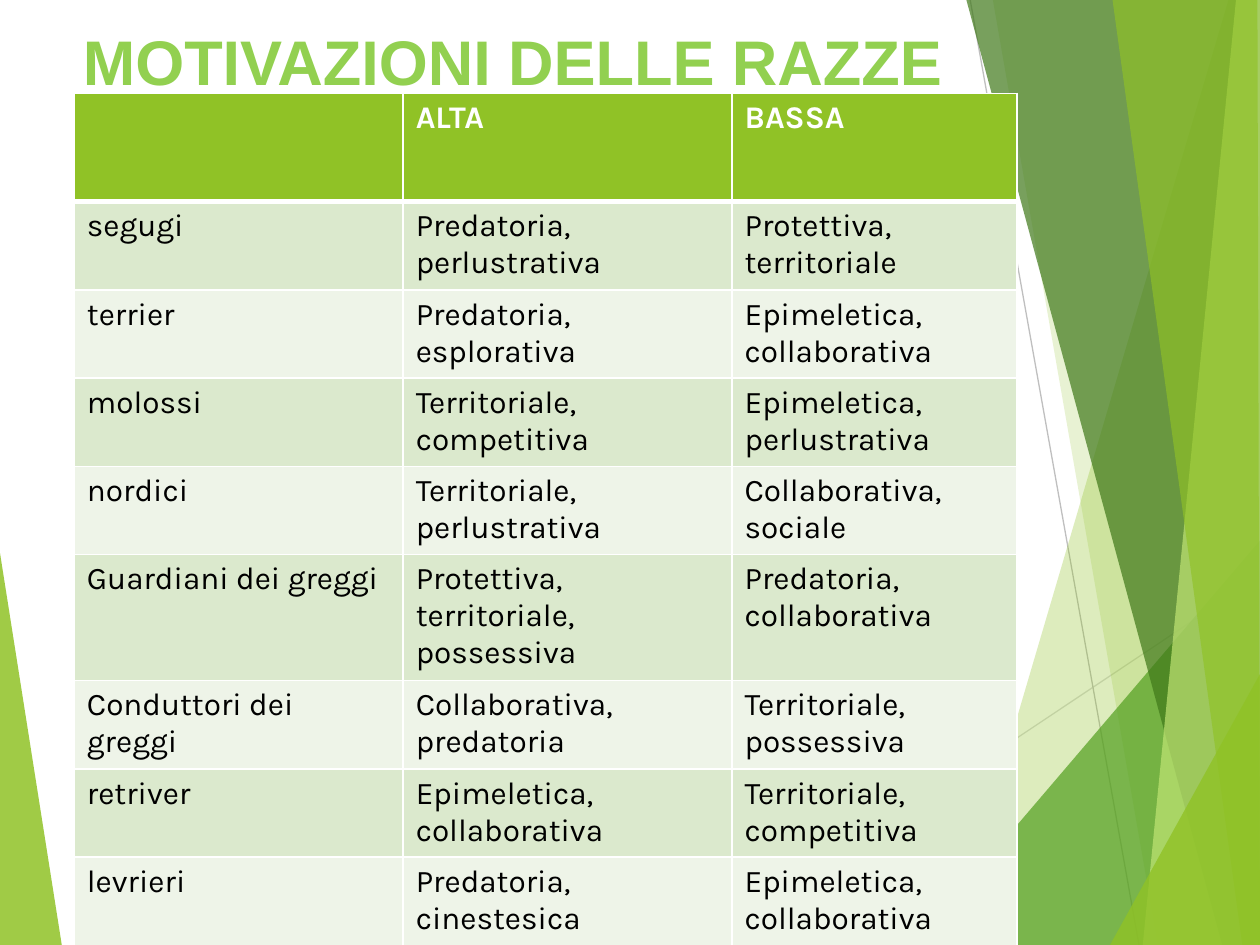
from dataclasses import dataclass
from typing import NamedTuple

from lxml.etree import SubElement
from pptx import Presentation
from pptx.dml.color import RGBColor
from pptx.enum.shapes import MSO_CONNECTOR
from pptx.enum.text import MSO_ANCHOR, PP_ALIGN
from pptx.oxml import parse_xml
from pptx.oxml.ns import nsdecls, qn
from pptx.util import Emu, Inches, Pt


@dataclass(frozen=True)
class Theme:
    lime: str = "90C226"
    leaf: str = "54A021"
    forest: str = "3F7819"
    pale_lime: str = "C0E474"
    title: str = "92D050"
    white: str = "FFFFFF"
    black: str = "000000"
    bands: tuple[str, str] = ("DBE9CD", "EEF4E8")
    title_font: str = "Arial"
    table_font: str = "Karla"
    title_size: int = 36
    table_size: int = 18
    hairline: float = 0.75
    border: int = 1
    header_rule: int = 3


class Facet(NamedTuple):
    corners: tuple[tuple[float, float], ...]
    color: str
    opacity: int


class Ray(NamedTuple):
    start: tuple[float, float]
    end: tuple[float, float]
    color: str


class Breed(NamedTuple):
    name: str
    high: str
    low: str


THEME = Theme()
WIDTH, HEIGHT = Inches(10), Inches(7.5)

LEFT_FACET = Facet(((0, 58.53), (4.9, 100), (0, 100)), THEME.lime, 85)
RAYS = (
    Ray((56.1, 100), (100, 60.93), "D9D9D9"),
    Ray((77, 0), (90.4, 100), "BFBFBF"),
)
RIGHT_FACETS = (
    Facet(((97.5, 0), (75.4, 100), (100, 100), (100, 0)), THEME.lime, 30),
    Facet(((78.8, 0), (91.9, 100), (100, 100), (100, 0)), THEME.lime, 20),
    Facet(((72.6, 100), (100, 57.2), (100, 100)), THEME.leaf, 72),
    Facet(((76.7, 0), (97, 100), (100, 100), (100, 0)), THEME.forest, 70),
    Facet(((98.1, 0), (90.7, 100), (100, 100), (100, 0)), THEME.pale_lime, 70),
    Facet(((88.3, 0), (98.6, 100), (100, 100), (99.8, 0)), THEME.lime, 65),
    Facet(((88.1, 100), (100, 71.33), (100, 100)), THEME.lime, 80),
)

HEADINGS = Breed("", "ALTA", "BASSA")
BREEDS = (
    Breed("segugi", "Predatoria, perlustrativa", "Protettiva, territoriale"),
    Breed("terrier", "Predatoria, esplorativa", "Epimeletica, collaborativa"),
    Breed("molossi", "Territoriale, competitiva", "Epimeletica, perlustrativa"),
    Breed("nordici", "Territoriale, perlustrativa", "Collaborativa, sociale"),
    Breed("Guardiani dei greggi", "Protettiva, territoriale, possessiva",
          "Predatoria, collaborativa"),
    Breed("Conduttori dei greggi", "Collaborativa, predatoria", "Territoriale, possessiva"),
    Breed("retriver", "Epimeletica, collaborativa", "Territoriale, competitiva"),
    Breed("levrieri", "Predatoria, cinestesica", "Epimeletica, collaborativa"),
)
COLUMN_SHARES = (26.1, 26.1, 22.6)
HEADER_SHARE, BREED_SHARE = 11.47, 8.53


def across(share: float) -> Emu:
    return Emu(round(WIDTH * share / 100))


def down(share: float) -> Emu:
    return Emu(round(HEIGHT * share / 100))


def rgb(color: str) -> RGBColor:
    return RGBColor.from_string(color)


def draw_facet(slide, facet: Facet) -> None:
    first, *others = [(across(x), down(y)) for x, y in facet.corners]
    outline = slide.shapes.build_freeform(*first, scale=1.0)
    outline.add_line_segments(others, close=True)
    shape = outline.convert_to_shape()
    shape.shadow.inherit = False
    shape.line.fill.background()
    shape.fill.solid()
    shape.fill.fore_color.rgb = rgb(facet.color)
    tint = shape.element.spPr.find(qn("a:solidFill")).find(qn("a:srgbClr"))
    SubElement(tint, qn("a:alpha"), val=str(facet.opacity * 1000))


def draw_ray(slide, ray: Ray) -> None:
    line = slide.shapes.add_connector(
        MSO_CONNECTOR.STRAIGHT,
        across(ray.start[0]), down(ray.start[1]), across(ray.end[0]), down(ray.end[1]),
    )
    line.line.color.rgb = rgb(ray.color)
    line.line.width = Pt(THEME.hairline)
    SubElement(line.element.spPr, qn("a:effectLst"))


def style_font(font, family: str, size: int, color: str, bold: bool) -> None:
    font.name = family
    font.size = Pt(size)
    font.color.rgb = rgb(color)
    font.bold = bold


def draw_title(slide, words: str) -> None:
    title = slide.shapes.add_textbox(across(-4.3), down(1.73), across(90), down(17.73))
    frame = title.text_frame
    frame.word_wrap = True
    frame.vertical_anchor = MSO_ANCHOR.TOP
    heading = frame.paragraphs[0]
    heading.text = words
    heading.alignment = PP_ALIGN.CENTER
    style_font(heading.font, THEME.title_font, THEME.title_size, THEME.title, True)


def border_cell(cell, top: int, bottom: int) -> None:
    sides = {"L": THEME.border, "R": THEME.border, "T": top, "B": bottom}
    properties = cell._tc.get_or_add_tcPr()
    for position, (side, points) in enumerate(sides.items()):
        properties.insert(position, parse_xml(
            f'<a:ln{side} {nsdecls("a")} w="{Pt(points)}"><a:solidFill>'
            f'<a:srgbClr val="{THEME.white}"/></a:solidFill></a:ln{side}>'
        ))


def draw_breeds(slide, headings: Breed, breeds: tuple[Breed, ...]) -> None:
    entries = (headings, *breeds)
    height = HEADER_SHARE + BREED_SHARE * len(breeds)
    table = slide.shapes.add_table(
        len(entries), len(COLUMN_SHARES),
        across(5.9), down(9.87), across(sum(COLUMN_SHARES)), down(height),
    ).table
    for column, share in zip(table.columns, COLUMN_SHARES):
        column.width = across(share)
    for index, entry in enumerate(entries):
        is_header = index == 0
        table.rows[index].height = down(HEADER_SHARE if is_header else BREED_SHARE)
        background = THEME.lime if is_header else THEME.bands[(index - 1) % 2]
        ink = THEME.white if is_header else THEME.black
        top = THEME.header_rule if index == 1 else THEME.border
        bottom = THEME.header_rule if is_header else THEME.border
        for cell, words in zip(table.rows[index].cells, entry):
            cell.text = words
            cell.fill.solid()
            cell.fill.fore_color.rgb = rgb(background)
            style_font(cell.text_frame.paragraphs[0].font,
                       THEME.table_font, THEME.table_size, ink, is_header)
            border_cell(cell, top, bottom)


def main() -> None:
    presentation = Presentation()
    presentation.slide_width, presentation.slide_height = WIDTH, HEIGHT
    slide = presentation.slides.add_slide(presentation.slide_layouts[6])
    draw_facet(slide, LEFT_FACET)
    for ray in RAYS:
        draw_ray(slide, ray)
    for facet in RIGHT_FACETS:
        draw_facet(slide, facet)
    draw_title(slide, "MOTIVAZIONI DELLE RAZZE")
    draw_breeds(slide, HEADINGS, BREEDS)
    presentation.save("out.pptx")


if __name__ == "__main__":
    main()
